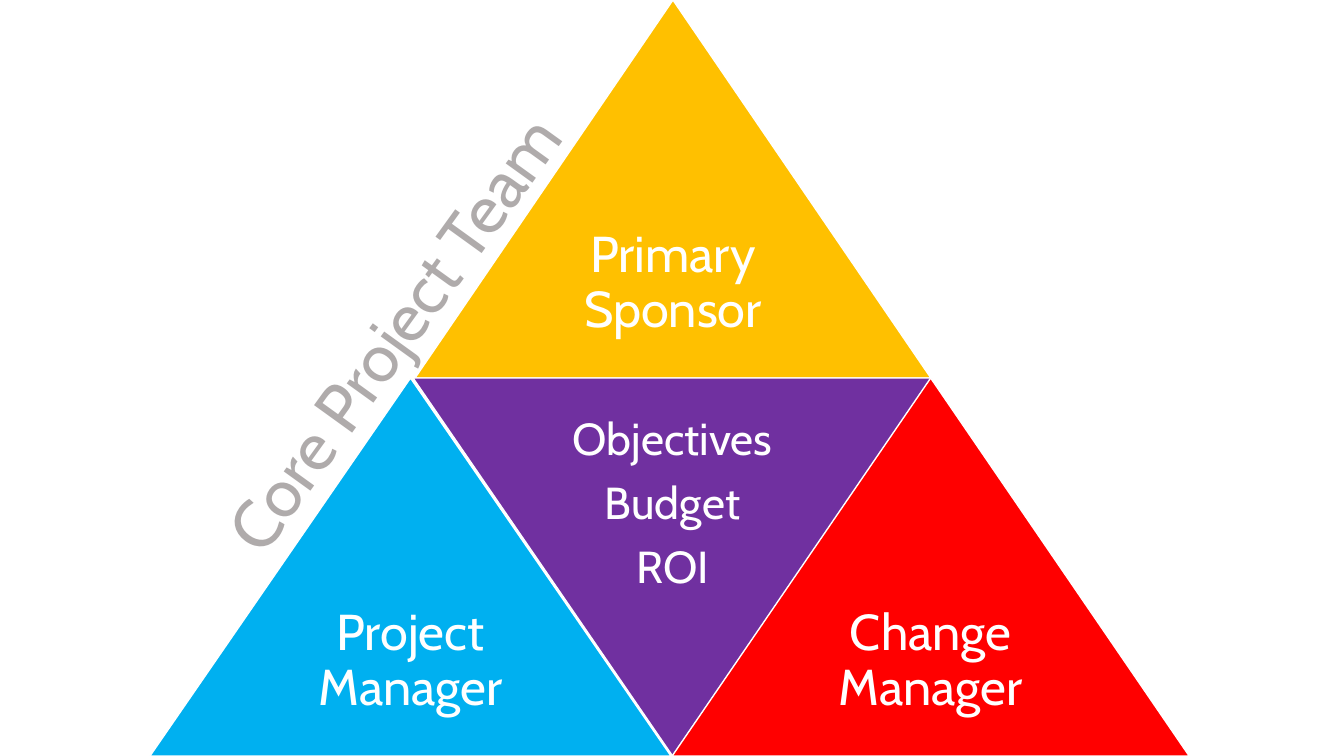
"""Build the core project team pyramid slide."""
from dataclasses import dataclass

from pptx import Presentation
from pptx.dml.color import RGBColor
from pptx.enum.shapes import MSO_SHAPE
from pptx.enum.text import MSO_ANCHOR, PP_ALIGN
from pptx.slide import Slide
from pptx.util import Cm, Pt

TRIANGLE = MSO_SHAPE.ISOSCELES_TRIANGLE
MIDDLE = MSO_ANCHOR.MIDDLE
CENTER = PP_ALIGN.CENTER
FONT = "Cabin"
WHITE = "FFFFFF"
SLIDE_W, SLIDE_H = 33.87, 19.05
ROW_H = SLIDE_H / 2


@dataclass
class Panel:
    left: float
    top: float
    width: float
    fill: str
    text: str
    size: int = 36
    rotation: float = 0
    text_offset: float = ROW_H / 2


@dataclass
class Label:
    left: float
    top: float
    width: float
    height: float
    text: str
    size: int
    color: str = WHITE
    rotation: float = 0
    line_spacing: float = 0.9
    space_after: float = 0
    inset: float = 0.38


PANELS = [
    Panel(10.46, 0, 13.0, "FFC000", "Primary Sponsor"),
    Panel(3.78, ROW_H, 13.13, "00B0F0", "Project Manager"),
    Panel(10.41, ROW_H, 13.08, "7030A0", "Objectives\nBudget\nROI",
          size=32, rotation=180, text_offset=0.81),
    Panel(16.94, ROW_H, 13.03, "FF0000", "Change Manager"),
]
TEAM = Label(2.01, 7.21, 15.75, 2.31, "Core Project Team", 48, "AFABAB",
             rotation=305.8, line_spacing=1, inset=0.13)


def rgb(value: str) -> RGBColor:
    return RGBColor.from_string(value)


def add_label(s: Slide, label: Label) -> None:
    box = s.shapes.add_textbox(Cm(label.left), Cm(label.top),
                               Cm(label.width), Cm(label.height))
    box.rotation = label.rotation
    tf = box.text_frame
    tf.word_wrap = True
    tf.vertical_anchor = MIDDLE
    tf.margin_left = tf.margin_right = Cm(label.inset)
    tf.margin_top = tf.margin_bottom = Cm(label.inset)
    tf.text = label.text
    for p in tf.paragraphs:
        p.alignment = CENTER
        p.line_spacing = label.line_spacing
        p.space_after = Pt(label.space_after)
        for r in p.runs:
            r.font.name = FONT
            r.font.size = Pt(label.size)
            r.font.color.rgb = rgb(label.color)


def add_panel(s: Slide, panel: Panel) -> None:
    sp = s.shapes.add_shape(TRIANGLE, Cm(panel.left), Cm(panel.top),
                            Cm(panel.width), Cm(ROW_H))
    sp.rotation = panel.rotation
    sp.shadow.inherit = False
    sp.fill.solid()
    sp.fill.fore_color.rgb = rgb(panel.fill)
    sp.line.color.rgb = rgb(WHITE)
    sp.line.width = Pt(1)
    add_label(s, Label(panel.left + panel.width / 4,
                       panel.top + panel.text_offset,
                       panel.width / 2, ROW_H / 2, panel.text, panel.size,
                       space_after=0.35 * panel.size))


def main() -> None:
    prs = Presentation()
    prs.slide_width, prs.slide_height = Cm(SLIDE_W), Cm(SLIDE_H)
    s = prs.slides.add_slide(prs.slide_layouts[6])
    for panel in PANELS:
        add_panel(s, panel)
    add_label(s, TEAM)
    prs.save("out.pptx")


if __name__ == "__main__":
    main()
